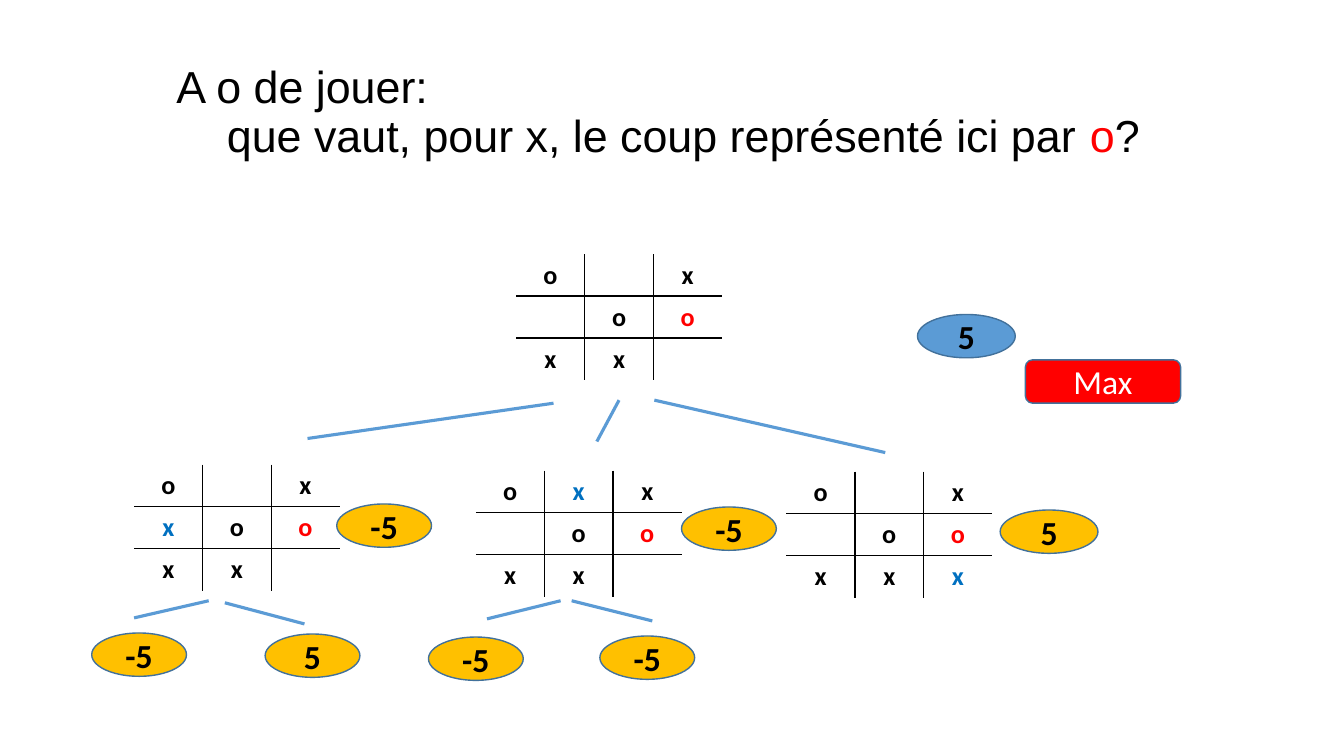
from dataclasses import dataclass

from lxml import etree
from pptx import Presentation
from pptx import util as u
from pptx.dml.color import RGBColor
from pptx.enum import shapes, text
from pptx.oxml import ns

PX = 9144
BLACK, WHITE, RED, BLUE = "000000", "FFFFFF", "FF0000", "0070C0"
GOLD, SKY, OUTLINE = "FFC000", "5B9BD5", "42719B"
CELL_WIDTH, BOARD_HEIGHT = 68, 125
MARKS = {"o": ("o", BLACK), "x": ("x", BLACK), "O": ("o", RED), "X": ("x", BLUE)}


@dataclass(frozen=True)
class Board:
    left: int
    top: int
    rows: tuple[str, str, str]


@dataclass(frozen=True)
class Branch:
    x1: int
    y1: int
    x2: int
    y2: int


@dataclass(frozen=True)
class Badge:
    left: int
    top: int
    label: str
    width: int = 94
    fill: str = GOLD
    color: str = BLACK
    bold: bool = True
    kind: shapes.MSO_SHAPE = shapes.MSO_SHAPE.OVAL


BOARDS = [
    Board(512, 252, ("o.x", ".oO", "xx.")),
    Board(780, 468, ("o.x", ".oO", "xxX")),
    Board(472, 467, ("oXx", ".oO", "xx.")),
    Board(133, 461, ("o.x", "XoO", "xx.")),
]
BRANCHES = [
    Branch(878, 449, 649, 397),
    Branch(549, 400, 305, 435),
    Branch(614, 397, 592, 438),
    Branch(207, 596, 133, 613),
    Branch(556, 596, 483, 614),
    Branch(647, 616, 567, 596),
    Branch(302, 619, 223, 598),
]
BADGES = [
    Badge(992, 506, "5", width=97),
    Badge(676, 503, "-5"),
    Badge(1017, 357, "Max", width=154, fill=RED, color=WHITE, bold=False,
          kind=shapes.MSO_SHAPE.ROUNDED_RECTANGLE),
    Badge(334, 500, "-5"),
    Badge(910, 312, "5", width=97, fill=SKY),
    Badge(91, 628, "-5"),
    Badge(263, 629, "5"),
    Badge(595, 631, "-5"),
    Badge(425, 632, "-5"),
]


def px(value: float) -> int:
    return round(value * PX)


def rgb(value: str) -> RGBColor:
    return RGBColor.from_string(value)


def set_attributes(target, values: dict) -> None:
    for name, value in values.items():
        setattr(target, name, value)


def add_run(paragraph, words: str, font: str, size: float, color: str, bold: bool = False) -> None:
    run = paragraph.add_run()
    run.text = words
    set_attributes(run.font, {"name": font, "size": u.Pt(size), "bold": bold})
    run.font.color.rgb = rgb(color)


def set_frame(frame) -> None:
    set_attributes(frame, {
        "word_wrap": True, "vertical_anchor": text.MSO_ANCHOR.MIDDLE,
        "margin_left": px(13), "margin_right": px(13),
        "margin_top": px(7), "margin_bottom": px(7),
    })


def add_title(slide) -> None:
    frame = slide.shapes.add_textbox(px(162), px(40), px(1079), px(145)).text_frame
    set_frame(frame)
    paragraph = frame.paragraphs[0]
    paragraph.line_spacing = 0.9
    add_run(paragraph, "A o de jouer:", "Arial", 32, BLACK)
    paragraph.add_line_break()
    add_run(paragraph, "\tque vaut, pour x, le coup représenté ici par ", "Arial", 32, BLACK)
    add_run(paragraph, "o", "Arial", 32, RED)
    add_run(paragraph, "?", "Arial", 32, BLACK)


def set_borders(cell, row: int, column: int) -> None:
    properties = cell._tc.get_or_add_tcPr()
    sides = {"lnL": column > 0, "lnR": column < 2, "lnT": row > 0, "lnB": row < 2}
    for side, visible in sides.items():
        line = etree.SubElement(properties, ns.qn(f"a:{side}"), w=str(u.Pt(1)))
        if visible:
            fill = etree.SubElement(line, ns.qn("a:solidFill"))
            etree.SubElement(fill, ns.qn("a:srgbClr"), val=BLACK)
        else:
            etree.SubElement(line, ns.qn("a:noFill"))


def add_board(slide, board: Board) -> None:
    table = slide.shapes.add_table(
        3, 3, px(board.left), px(board.top), px(3 * CELL_WIDTH), px(BOARD_HEIGHT)).table
    set_attributes(table, {"first_row": False, "horz_banding": False})
    for row, marks in enumerate(board.rows):
        for column, mark in enumerate(marks):
            cell = table.cell(row, column)
            set_attributes(cell, {
                "margin_left": px(13), "margin_right": px(13),
                "margin_top": px(5), "margin_bottom": px(5),
            })
            set_borders(cell, row, column)
            cell.fill.solid()
            cell.fill.fore_color.rgb = rgb(WHITE)
            if mark in MARKS:
                letter, color = MARKS[mark]
                paragraph = cell.text_frame.paragraphs[0]
                paragraph.alignment = text.PP_ALIGN.CENTER
                add_run(paragraph, letter, "Calibri", 18.7, color, bold=True)


def add_branch(slide, branch: Branch) -> None:
    connector = slide.shapes.add_connector(
        shapes.MSO_CONNECTOR.STRAIGHT,
        px(branch.x1), px(branch.y1), px(branch.x2), px(branch.y2))
    connector.line.color.rgb = rgb(SKY)
    connector.line.width = u.Pt(2.25)
    etree.SubElement(connector._element.spPr, ns.qn("a:effectLst"))


def add_badge(slide, badge: Badge) -> None:
    shape = slide.shapes.add_shape(
        badge.kind, px(badge.left), px(badge.top), px(badge.width), px(43))
    shape.shadow.inherit = False
    shape.fill.solid()
    shape.fill.fore_color.rgb = rgb(badge.fill)
    shape.line.color.rgb = rgb(OUTLINE)
    shape.line.width = u.Pt(1)
    set_frame(shape.text_frame)
    paragraph = shape.text_frame.paragraphs[0]
    paragraph.alignment = text.PP_ALIGN.CENTER
    add_run(paragraph, badge.label, "Calibri", 24, badge.color, badge.bold)


def main() -> None:
    presentation = Presentation()
    set_attributes(presentation, {"slide_width": px(1333), "slide_height": px(750)})
    slide = presentation.slides.add_slide(presentation.slide_layouts[6])
    add_title(slide)
    for board in BOARDS:
        add_board(slide, board)
    for branch in BRANCHES:
        add_branch(slide, branch)
    for badge in BADGES:
        add_badge(slide, badge)
    presentation.save("out.pptx")


if __name__ == "__main__":
    main()
